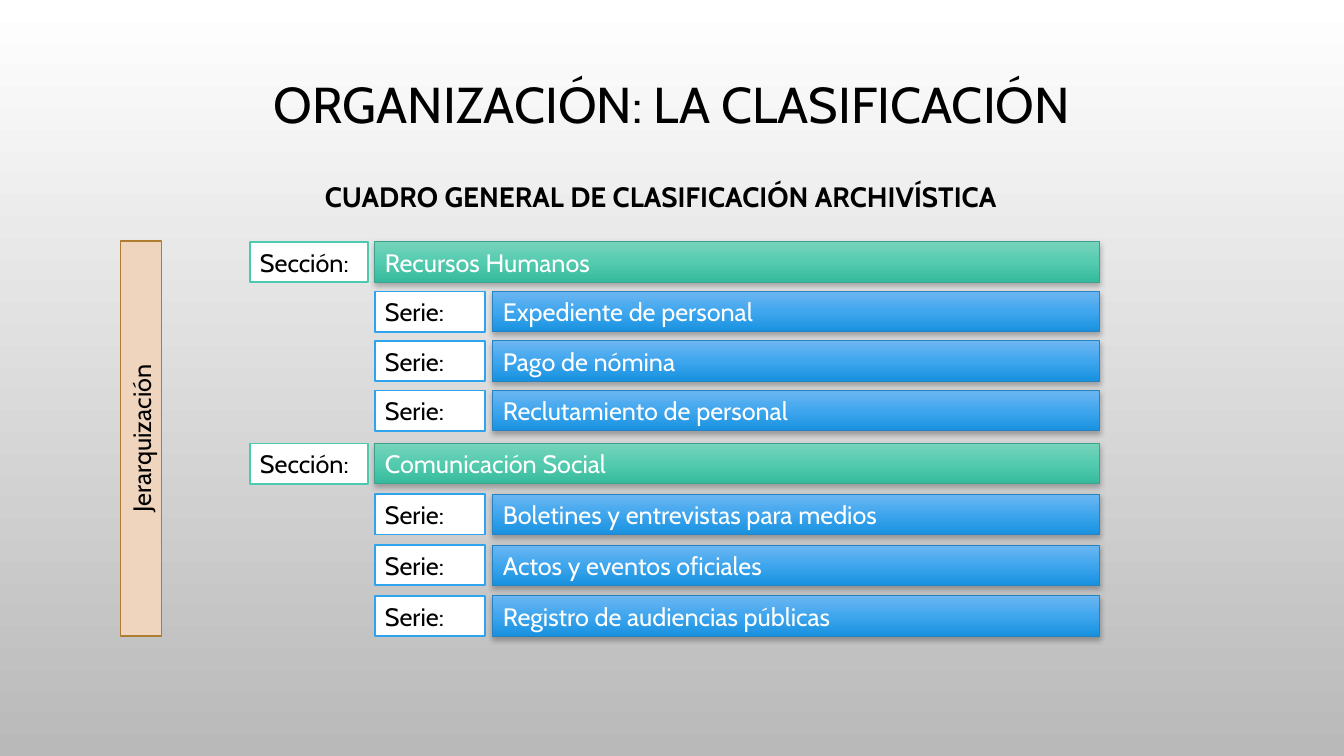
from copy import deepcopy

from lxml import etree
from pptx import Presentation
from pptx import util as u
from pptx.dml.color import RGBColor
from pptx.enum import shapes, text
from pptx.oxml.ns import qn

BLACK = RGBColor(0x00, 0x00, 0x00)
WHITE = RGBColor(0xFF, 0xFF, 0xFF)
GREY = RGBColor(0xB9, 0xB9, 0xB9)
MINT = RGBColor(0x4B, 0xCA, 0xAD)
MINT_EDGE = RGBColor(0x3C, 0xA2, 0x8B)
MINT_FADE = [RGBColor(0x77, 0xD4, 0xBC), RGBColor(0x54, 0xCB, 0xAF), RGBColor(0x36, 0xBA, 0x9C)]
BLUE = RGBColor(0x2F, 0xA3, 0xEE)
BLUE_EDGE = RGBColor(0x26, 0x83, 0xBF)
BLUE_FADE = [RGBColor(0x6C, 0xB6, 0xF1), RGBColor(0x3F, 0xA6, 0xEE), RGBColor(0x18, 0x91, 0xDF)]
SAND = RGBColor(0xEF, 0xD5, 0xBD)
SAND_EDGE = RGBColor(0xAE, 0x7D, 0x32)

COLUMNS, ROWS = 120, 60
BAR_HEIGHT = 3.2
SECTION_LEFT, SERIES_LEFT, NAME_LEFT, BAR_RIGHT = 22.32, 33.48, 44.01, 98.19
SECTION_LABEL, SERIES_LABEL = 10.53, 9.81

# Name, top row, rows from one bar to the next, series
SECTIONS = [
    ("Recursos Humanos", 19.2, 3.93,
     ["Expediente de personal", "Pago de nómina", "Reclutamiento de personal"]),
    ("Comunicación Social", 35.2, 4.03,
     ["Boletines y entrevistas para medios", "Actos y eventos oficiales",
      "Registro de audiencias públicas"]),
]


def write(frame, words, size=18, color=BLACK, bold=False, align=text.PP_ALIGN.LEFT,
          anchor=text.MSO_ANCHOR.MIDDLE, spacing=1.0):
    frame.word_wrap = True
    frame.auto_size = text.MSO_AUTO_SIZE.NONE
    frame.vertical_anchor = anchor
    para = frame.paragraphs[0]
    para.alignment = align
    para.line_spacing = spacing
    span = para.add_run()
    span.text = words
    span.font.name = "Cabin"
    span.font.size = u.Pt(size)
    span.font.bold = bold
    span.font.color.rgb = color


def fade(fill, element, colors):
    """Fill from top to bottom with evenly spaced colours."""
    fill.gradient()
    fill.gradient_angle = 270
    stops = element.xpath(".//a:gsLst")[0]
    while len(stops) < len(colors):
        stops.append(deepcopy(stops[0]))
    for index, (stop, color) in enumerate(zip(fill.gradient_stops, colors)):
        stop.position = index / (len(colors) - 1)
        stop.color.rgb = color


def drop_shadow(shape):
    effects = shape.element.spPr.find(qn("a:effectLst"))
    shadow = etree.SubElement(effects, qn("a:outerShdw"), blurRad=str(u.Pt(4)),
                              dist=str(u.Pt(2)), dir="5400000", rotWithShape="0")
    color = etree.SubElement(shadow, qn("a:srgbClr"), val=str(BLACK))
    etree.SubElement(color, qn("a:alpha"), val="28000")


class Chart:
    """The current slide, measured in grid columns and rows."""

    def __init__(self, deck):
        self.column = deck.slide_width / COLUMNS
        self.row = deck.slide_height / ROWS
        self.page = deck.slides.add_slide(deck.slide_layouts[5])
        fade(self.page.background.fill, self.page.element, [WHITE, GREY])

    def area(self, left, top, width, height):
        return (round(left * self.column), round(top * self.row),
                round(width * self.column), round(height * self.row))

    def title(self, words, *place):
        box = self.page.shapes.title
        box.left, box.top, box.width, box.height = self.area(*place)
        write(box.text_frame, words, size=36, align=text.PP_ALIGN.CENTER, spacing=0.9)

    def subtitle(self, words, *place):
        box = self.page.shapes.add_textbox(*self.area(*place))
        write(box.text_frame, words, size=20, bold=True, align=text.PP_ALIGN.CENTER,
              anchor=text.MSO_ANCHOR.TOP, spacing=1.2)

    def box(self, words, left, top, width, fill, edge, weight=0.75, **style):
        """Draw a one-line box; a list of colours as fill gives a shaded, raised bar."""
        box = self.page.shapes.add_shape(shapes.MSO_SHAPE.RECTANGLE,
                                         *self.area(left, top, width, BAR_HEIGHT))
        box.shadow.inherit = False
        if isinstance(fill, list):
            fade(box.fill, box.element, fill)
            drop_shadow(box)
        else:
            box.fill.solid()
            box.fill.fore_color.rgb = fill
        box.line.color.rgb = edge
        box.line.width = u.Pt(weight)
        write(box.text_frame, words, **style)
        return box

    def entry(self, label, name, top, left, label_width, name_left, accent, colors, edge):
        self.box(label, left, top, label_width, WHITE, accent, weight=1.25)
        self.box(name, name_left, top, BAR_RIGHT - name_left, colors, edge, color=WHITE)

    def section(self, name, top):
        self.entry("Sección:", name, top, SECTION_LEFT, SECTION_LABEL, SERIES_LEFT,
                   MINT, MINT_FADE, MINT_EDGE)

    def series(self, name, top):
        self.entry("Serie:", name, top, SERIES_LEFT, SERIES_LABEL, NAME_LEFT,
                   BLUE, BLUE_FADE, BLUE_EDGE)


def main():
    deck = Presentation()
    deck.slide_width, deck.slide_height = u.Inches(13.33), u.Inches(7.5)
    chart = Chart(deck)
    chart.title("ORGANIZACIÓN: LA CLASIFICACIÓN", 9, 1.52, 102, 14)
    chart.subtitle("CUADRO GENERAL DE CLASIFICACIÓN ARCHIVÍSTICA", 9, 13.36, 100, 29.92)
    for section, top, pitch, names in SECTIONS:
        chart.section(section, top)
        for step, name in enumerate(names, 1):
            chart.series(name, top + step * pitch)
    hierarchy = chart.box("Jerarquización", -5.04, 33.2, 35.28, SAND, SAND_EDGE,
                          align=text.PP_ALIGN.CENTER)
    hierarchy.rotation = 270
    deck.save("out.pptx")


if __name__ == "__main__":
    main()
